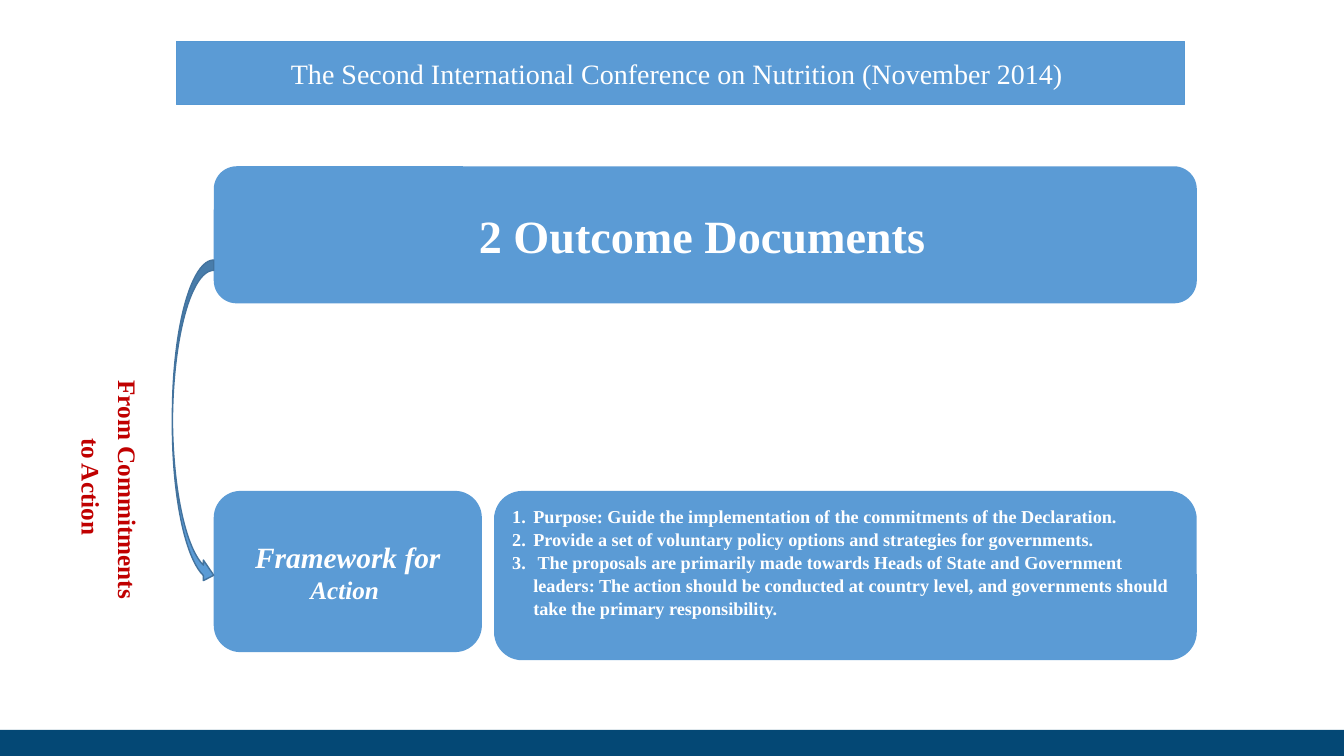
import pptx
import pptx.util
import pptx.dml.color
import pptx.enum.shapes
import pptx.enum.text
from lxml import etree

COLORS = {"blue": "5B9BD5", "banner_edge": "5698D3", "arrow_edge": "43739E",
          "footer": "044875", "white": "FFFFFF", "red": "C00000"}
FONT = "Times New Roman"
SLIDE_W, SLIDE_H = 13.33, 7.5

CONFERENCE = [[("The Second International Conference on Nutrition (November 2014) ", 20, False, False)]]
OUTCOME = [[("2 Outcome Documents", 33, True, False), (" ", 18, False, False)]]
FRAMEWORK = [[("Framework for ", 21, True, True), ("Action ", 18, True, True)]]
PROPOSALS = [[(line, 13, True, False)] for line in (
    "Purpose: Guide the implementation of the commitments of the Declaration.",
    "Provide a set of voluntary policy options and strategies for governments.",
    " The proposals are primarily made towards Heads of State and Government leaders: "
    "The action should be conducted at country level, and governments should take the primary responsibility.",
)]
MOTTO = [[("From Commitments to Action ", 18, True, False)]]

LEFT, RIGHT = 2.12, 11.87
OUTCOME_TOP, LOWER_TOP = 1.65, 4.87
FRAMEWORK_W, GAP = 2.66, 0.12
PROPOSALS_LEFT = LEFT + FRAMEWORK_W + GAP
ARROW_W = 0.41
FOOTER_TOP = 7.24
NUMBER_INDENT = 0.21

KINDS = pptx.enum.shapes.MSO_SHAPE
ANCHORS = pptx.enum.text.MSO_ANCHOR
ALIGNS = pptx.enum.text.PP_ALIGN


def rgb(name):
    return pptx.dml.color.RGBColor.from_string(COLORS[name])


def inches(box):
    return [pptx.util.Inches(length) for length in box]


def add_block(slide, kind, box, fill="blue", edge=None):
    block = slide.shapes.add_shape(kind, *inches(box))
    block.shadow.inherit = False
    block.fill.solid()
    block.fill.fore_color.rgb = rgb(fill)
    if edge:
        block.line.color.rgb = rgb(edge)
        block.line.width = pptx.util.Pt(1)
    else:
        block.line.fill.background()
    return block


def number(paragraph):
    properties = paragraph._p.get_or_add_pPr()
    indent = pptx.util.Inches(NUMBER_INDENT)
    properties.set("marL", str(indent))
    properties.set("indent", str(-indent))
    etree.SubElement(properties, pptx.oxml.ns.qn("a:buFont"), typeface="+mj-lt")
    etree.SubElement(properties, pptx.oxml.ns.qn("a:buAutoNum"), type="arabicPeriod")


def write(block, paragraphs, color="white", anchor=ANCHORS.MIDDLE,
          align=ALIGNS.CENTER, spacing=None, numbered=False):
    frame = block.text_frame
    frame.word_wrap = True
    frame.vertical_anchor = anchor
    for index, runs in enumerate(paragraphs):
        paragraph = frame.add_paragraph() if index else frame.paragraphs[0]
        if numbered:
            number(paragraph)
        paragraph.alignment = align
        if spacing:
            paragraph.line_spacing = spacing
        for words, size, bold, italic in runs:
            run = paragraph.add_run()
            run.text = words
            run.font.name = FONT
            run.font.size = pptx.util.Pt(size)
            run.font.bold = bold
            run.font.italic = italic
            run.font.color.rgb = rgb(color)


def main():
    deck = pptx.Presentation()
    deck.slide_width, deck.slide_height = inches((SLIDE_W, SLIDE_H))
    slide = deck.slides.add_slide(deck.slide_layouts[6])

    add_block(slide, KINDS.RECTANGLE, (0, FOOTER_TOP, SLIDE_W, SLIDE_H - FOOTER_TOP), "footer")
    banner = add_block(slide, KINDS.RECTANGLE, (1.75, 0.41, 10, 0.63), edge="banner_edge")
    write(banner, CONFERENCE)

    outcome = add_block(slide, KINDS.ROUNDED_RECTANGLE, (LEFT, OUTCOME_TOP, RIGHT - LEFT, 1.36))
    write(outcome, OUTCOME)
    proposals = add_block(slide, KINDS.ROUNDED_RECTANGLE,
                          (PROPOSALS_LEFT, LOWER_TOP, RIGHT - PROPOSALS_LEFT, 1.68))
    write(proposals, PROPOSALS, anchor=ANCHORS.TOP, align=ALIGNS.LEFT, spacing=1.05, numbered=True)
    framework = add_block(slide, KINDS.ROUNDED_RECTANGLE, (LEFT, LOWER_TOP, FRAMEWORK_W, 1.6))
    write(framework, FRAMEWORK)

    add_block(slide, KINDS.CURVED_RIGHT_ARROW, (LEFT - ARROW_W, 2.58, ARROW_W, 3.23), edge="arrow_edge")

    motto = slide.shapes.add_textbox(*inches((0.63, 3.58, 0.9, 2.56)))
    write(motto, MOTTO, "red", ANCHORS.TOP, spacing=1.2)
    motto.text_frame._txBody.bodyPr.set("vert", "vert")

    deck.save("out.pptx")


if __name__ == "__main__":
    main()
